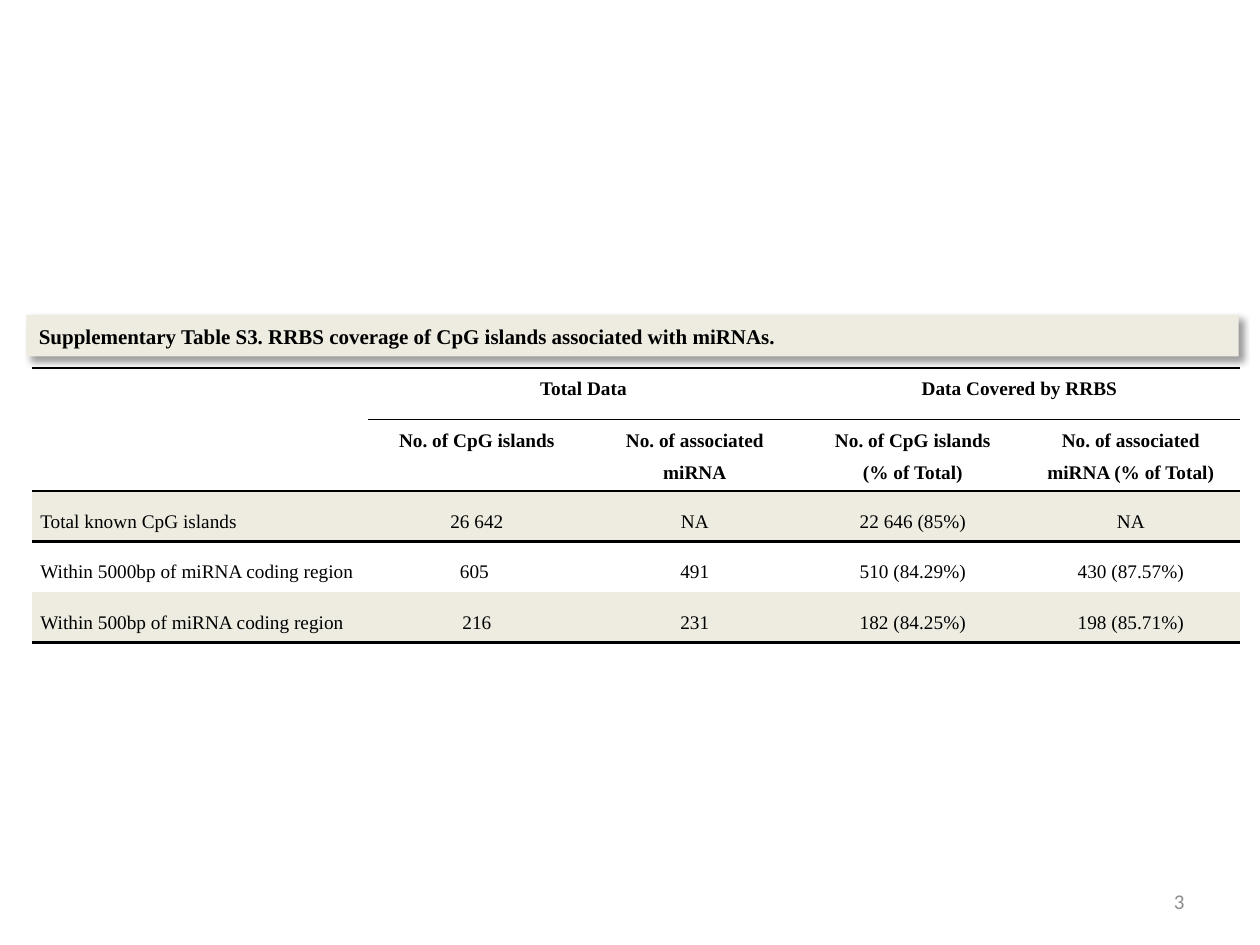
from lxml import etree
from pptx import Presentation
from pptx.dml.color import RGBColor
from pptx.enum.shapes import MSO_SHAPE as Shape
from pptx.enum.text import MSO_ANCHOR as Anchor, PP_ALIGN as Align
from pptx.oxml import parse_xml
from pptx.oxml.ns import nsdecls, qn
from pptx.util import Inches, Pt

BLACK = RGBColor(0x00, 0x00, 0x00)
GREY = RGBColor(0x8C, 0x8C, 0x8C)
BEIGE = RGBColor(0xEE, 0xEC, 0xE1)
SERIF, SANS = "Times New Roman", "Calibri"
NO_GRID_STYLE = "{2D5ABB26-0587-4C30-8999-92F81FD0307C}"

TITLE = "Supplementary Table S3. RRBS coverage of CpG islands associated with miRNAs."
COLUMN_WIDTHS = [2.67] + [1.73] * 4
ROW_HEIGHTS = [0.41, 0.57] + [0.4] * 3
ROWS = [
    ["", "Total Data ", "", "Data Covered by RRBS ", ""],
    ["", "No. of CpG islands", "No. of associated miRNA",
     "No. of CpG islands\n(% of Total)", "No. of associated miRNA (% of Total)"],
    ["Total known CpG islands", "26 642", "NA", "22 646 (85%)", "NA"],
    ["Within 5000bp of miRNA coding region", "605 ", "491", "510 (84.29%)", "430 (87.57%)"],
    ["Within 500bp of miRNA coding region", "216", "231", "182 (84.25%)", "198 (85.71%)"],
]
MERGES = [((0, 0), (1, 0)), ((0, 1), (0, 2)), ((0, 3), (0, 4))]
HEADER_ROWS = 2
# Line widths in points above the first row and below each row
RULES = [1, 0.75, 1.5, 2, 0, 2]


class SlideBuilder:
    def __init__(self, slide):
        self.slide = slide

    def add_lines(self, frame, text, size, font=SERIF, color=BLACK, bold=False,
                  align=Align.LEFT, spacing=1.0):
        """Put each line of the text in its own paragraph."""
        for index, line in enumerate(text.split("\n")):
            para = frame.paragraphs[0] if index == 0 else frame.add_paragraph()
            para.alignment = align
            para.line_spacing = spacing
            span = para.add_run()
            span.text = line
            span.font.size = Pt(size)
            span.font.name = font
            span.font.bold = bold
            span.font.color.rgb = color

    def banner(self, text, left, top, width, height):
        box = self.slide.shapes.add_shape(
            Shape.RECTANGLE, Inches(left), Inches(top), Inches(width), Inches(height))
        box.fill.solid()
        box.fill.fore_color.rgb = BEIGE
        box.line.fill.background()
        box._element.spPr.append(parse_xml(
            f'<a:effectLst {nsdecls("a")}><a:outerShdw blurRad="{Pt(4)}" dist="{Pt(3)}" '
            f'dir="2700000" algn="tl" rotWithShape="0"><a:srgbClr val="{BLACK}">'
            '<a:alpha val="40000"/></a:srgbClr></a:outerShdw></a:effectLst>'))
        frame = box.text_frame
        frame.word_wrap = True
        frame.vertical_anchor = Anchor.MIDDLE
        self.add_lines(frame, text, 12, bold=True)

    def text(self, text, left, top, width, height, **style):
        box = self.slide.shapes.add_textbox(
            Inches(left), Inches(top), Inches(width), Inches(height))
        box.text_frame.word_wrap = True
        box.text_frame.vertical_anchor = Anchor.MIDDLE
        self.add_lines(box.text_frame, text, **style)

    def border(self, cell, edge, points):
        """Draw one edge of a cell; zero points means no line."""
        line = etree.SubElement(cell._tc.get_or_add_tcPr(), qn(f"a:ln{edge}"))
        if points:
            line.set("w", str(Pt(points)))
            fill = etree.SubElement(line, qn("a:solidFill"))
            etree.SubElement(fill, qn("a:srgbClr")).set("val", str(BLACK))
        else:
            etree.SubElement(line, qn("a:noFill"))

    def cell(self, cell, text, row, column):
        header = row < HEADER_ROWS
        corner = header and column == 0
        cell.margin_left = cell.margin_right = Inches(0.07)
        cell.margin_top = cell.margin_bottom = 0
        cell.vertical_anchor = Anchor.TOP if header else Anchor.MIDDLE
        top = 0 if corner and row == 1 else RULES[row]
        bottom = 0 if corner and row == 0 else RULES[row + 1]
        for edge, points in zip("LRTB", (0, 0, top, bottom)):
            self.border(cell, edge, points)
        if not header and row % 2 == 0:
            cell.fill.solid()
            cell.fill.fore_color.rgb = BEIGE
        else:
            cell.fill.background()
        if text:
            self.add_lines(cell.text_frame, text, 11, bold=header, spacing=1.5,
                           align=Align.CENTER if column else Align.LEFT)

    def table(self, rows, left, top):
        table = self.slide.shapes.add_table(
            len(rows), len(COLUMN_WIDTHS), Inches(left), Inches(top),
            Inches(sum(COLUMN_WIDTHS)), Inches(sum(ROW_HEIGHTS))).table
        table.first_row = table.horz_banding = False
        table._tbl.tblPr.find(qn("a:tableStyleId")).text = NO_GRID_STYLE
        for column, width in zip(table.columns, COLUMN_WIDTHS):
            column.width = Inches(width)
        for row, height in zip(table.rows, ROW_HEIGHTS):
            row.height = Inches(height)
        for first, last in MERGES:
            table.cell(*first).merge(table.cell(*last))
        for row, texts in enumerate(rows):
            for column, text in enumerate(texts):
                self.cell(table.cell(row, column), text, row, column)


def main():
    deck = Presentation()
    deck.slide_width, deck.slide_height = Inches(10), Inches(7.5)
    page = SlideBuilder(deck.slides.add_slide(deck.slide_layouts[6]))
    page.banner(TITLE, 0.21, 2.5, 9.62, 0.33)
    page.table(ROWS, 0.25, 2.92)
    page.text("3", 7.17, 6.95, 2.33, 0.4, size=12, font=SANS, color=GREY, align=Align.RIGHT)
    deck.save("out.pptx")


if __name__ == "__main__":
    main()
